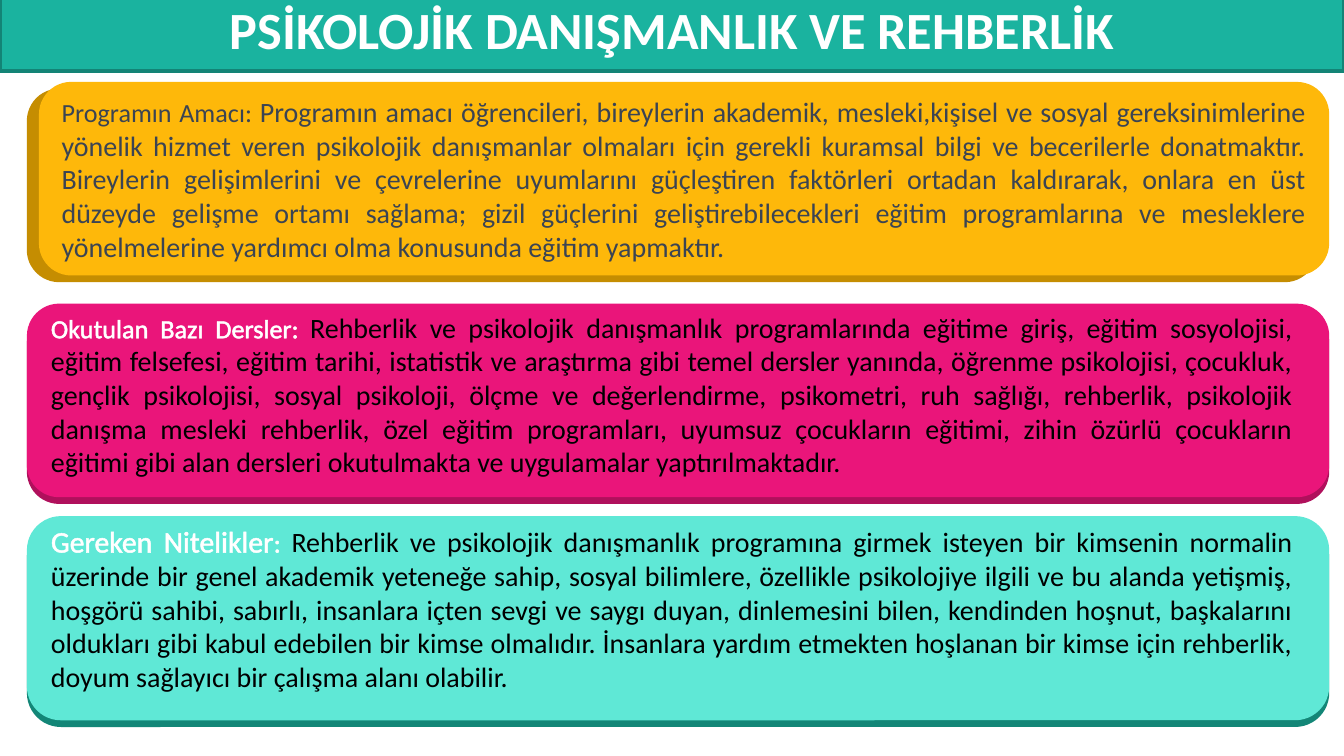
import pptx
import pptx.dml.color
import pptx.enum.shapes
import pptx.enum.text
import pptx.oxml
import pptx.util

Pt = pptx.util.Pt
Shape = pptx.enum.shapes.MSO_SHAPE
Align = pptx.enum.text.PP_ALIGN
Anchor = pptx.enum.text.MSO_ANCHOR

WHITE, BLACK, SLATE = "FFFFFF", "000000", "3B4453"
TITLE = "PSİKOLOJİK DANIŞMANLIK VE REHBERLİK"

# Boxes are (left, top, width, height). Runs are (text, size, colour, outlined).
# A card without a text box holds its text itself.
CARDS = [
    {
        "back": ((14.4, 47.5, 691.2, 103.7), "C58D01"),
        "front": ((20.9, 43.9, 691.2, 103.7), "FEB80A"),
        "text": None,
        "runs": [
            ("Programın Amacı: ", 14, SLATE, True),
            ("Programın amacı öğrencileri, bireylerin akademik, mesleki,kişisel ve "
             "sosyal gereksinimlerine yönelik hizmet veren psikolojik danışmanlar "
             "olmaları için gerekli kuramsal bilgi ve becerilerle donatmaktır. "
             "Bireylerin gelişimlerini ve çevrelerine uyumlarını güçleştiren "
             "faktörleri ortadan kaldırarak, onlara en üst düzeyde gelişme ortamı "
             "sağlama; gizil güçlerini geliştirebilecekleri eğitim programlarına ve "
             "mesleklere yönelmelerine yardımcı olma konusunda eğitim yapmaktır.",
             15, SLATE, False),
        ],
    },
    {
        "back": ((14.4, 166.3, 697.7, 103.7), "B0105C"),
        "front": ((14.4, 162.7, 697.7, 103.7), "EA157A"),
        "text": (20.2, 162.7, 679.7, 93.6),
        "runs": [
            ("Okutulan Bazı Dersler:", 14, WHITE, True),
            (" ", 12, WHITE, True),
            ("Rehberlik ve psikolojik danışmanlık programlarında eğitime giriş, "
             "eğitim sosyolojisi, eğitim felsefesi, eğitim tarihi, istatistik ve "
             "araştırma gibi temel dersler yanında, öğrenme psikolojisi, çocukluk, "
             "gençlik psikolojisi, sosyal psikoloji, ölçme ve değerlendirme, "
             "psikometri, ruh sağlığı, rehberlik, psikolojik danışma mesleki "
             "rehberlik, özel eğitim programları, uyumsuz çocukların eğitimi, zihin "
             "özürlü çocukların eğitimi gibi alan dersleri okutulmakta ve "
             "uygulamalar yaptırılmaktadır.", 15, BLACK, False),
        ],
    },
    {
        "back": ((14.4, 280.1, 697.7, 109.4), "138677"),
        "front": ((14.4, 276.5, 697.7, 109.4), "5FE8D6"),
        "text": (20.2, 276.5, 679.7, 90),
        "runs": [
            ("Gereken Nitelikler", 16, WHITE, True),
            (": ", 14, WHITE, True),
            ("Rehberlik ve psikolojik danışmanlık programına girmek isteyen bir "
             "kimsenin normalin üzerinde bir genel akademik yeteneğe sahip, sosyal "
             "bilimlere, özellikle psikolojiye ilgili ve bu alanda yetişmiş, hoşgörü "
             "sahibi, sabırlı, insanlara içten sevgi ve saygı duyan, dinlemesini "
             "bilen, kendinden hoşnut, başkalarını oldukları gibi kabul edebilen bir "
             "kimse olmalıdır. İnsanlara yardım etmekten hoşlanan bir kimse için "
             "rehberlik, doyum sağlayıcı bir çalışma alanı olabilir.",
             15, BLACK, False),
        ],
    },
]

OUTLINE = (
    '<a:ln xmlns:a="http://schemas.openxmlformats.org/drawingml/2006/main" '
    'w="18415"><a:solidFill><a:srgbClr val="FFFFFF"/></a:solidFill></a:ln>'
)


def color(code):
    return pptx.dml.color.RGBColor.from_string(code)


def style(target, values):
    """Set each named attribute of the target."""
    for name, value in values.items():
        setattr(target, name, value)


def draw(slide, kind, box, fill):
    shape = slide.shapes.add_shape(kind, *map(Pt, box))
    shape.shadow.inherit = False
    shape.fill.solid()
    shape.fill.fore_color.rgb = color(fill)
    shape.line.fill.background()
    return shape


def write(shape, runs, align, anchor, bold=False):
    frame = shape.text_frame
    style(frame, {"word_wrap": True, "vertical_anchor": anchor})
    para = frame.paragraphs[0]
    para.alignment = align
    for text, size, code, lined in runs:
        run = para.add_run()
        run.text = text
        style(run.font, {"name": "Calibri", "size": Pt(size), "bold": bold})
        run.font.color.rgb = color(code)
        if lined:
            run.font._element.insert(0, pptx.oxml.parse_xml(OUTLINE))


deck = pptx.Presentation()
style(deck, {"slide_width": Pt(720), "slide_height": Pt(405)})
slide = deck.slides.add_slide(deck.slide_layouts[6])

banner = draw(slide, Shape.RECTANGLE, (0, -7.2, 720, 45.4), "1AB39F")
banner.line.color.rgb = color("138476")
banner.line.width = Pt(2)
write(banner, [(TITLE, 28, WHITE, False)], Align.CENTER, Anchor.MIDDLE, True)

for card in CARDS:
    for layer in ("back", "front"):
        holder = draw(slide, Shape.ROUNDED_RECTANGLE, *card[layer])
    anchor = Anchor.MIDDLE
    if card["text"]:
        holder = slide.shapes.add_textbox(*map(Pt, card["text"]))
        anchor = Anchor.TOP
    write(holder, card["runs"], Align.JUSTIFY, anchor)

deck.save("out.pptx")
